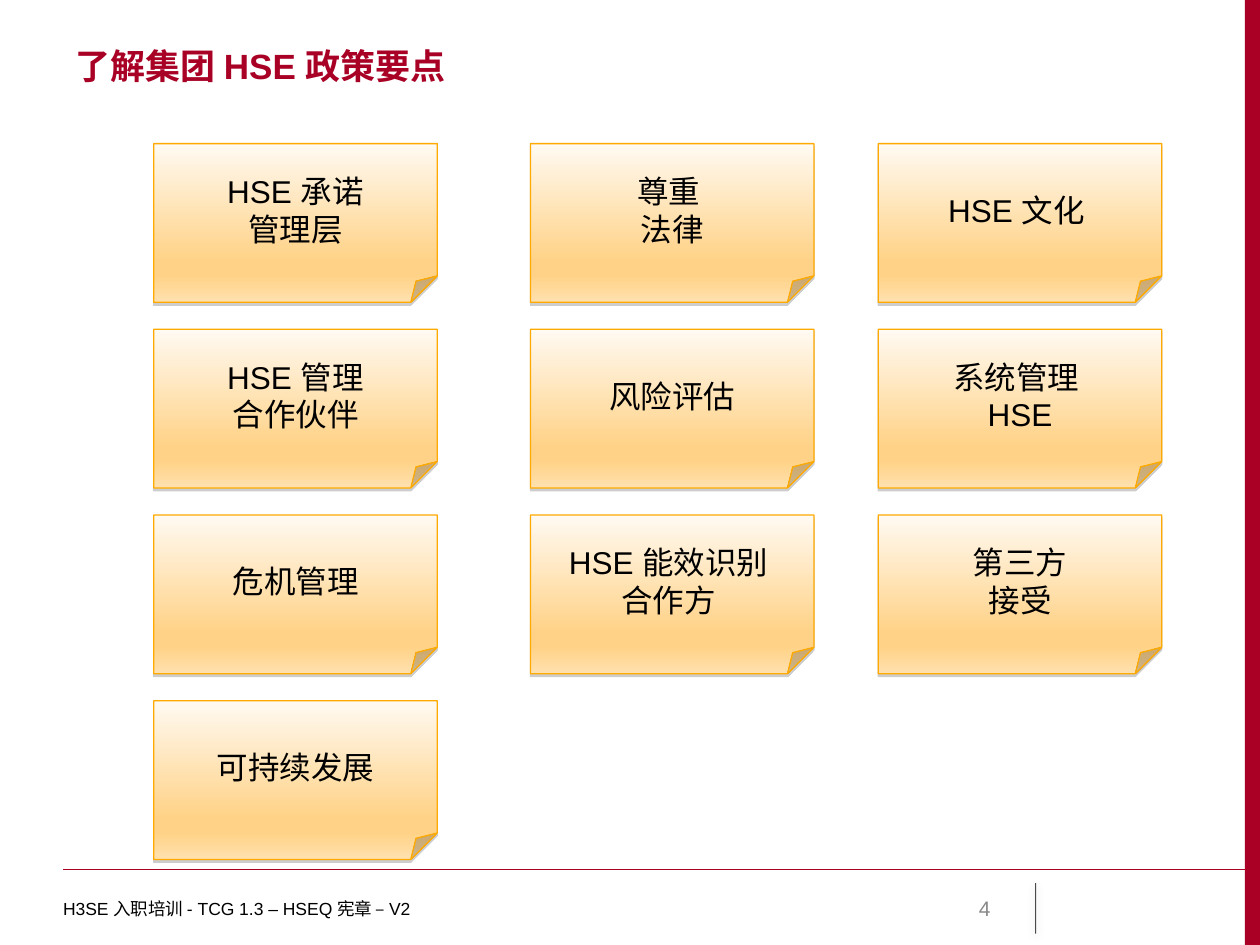
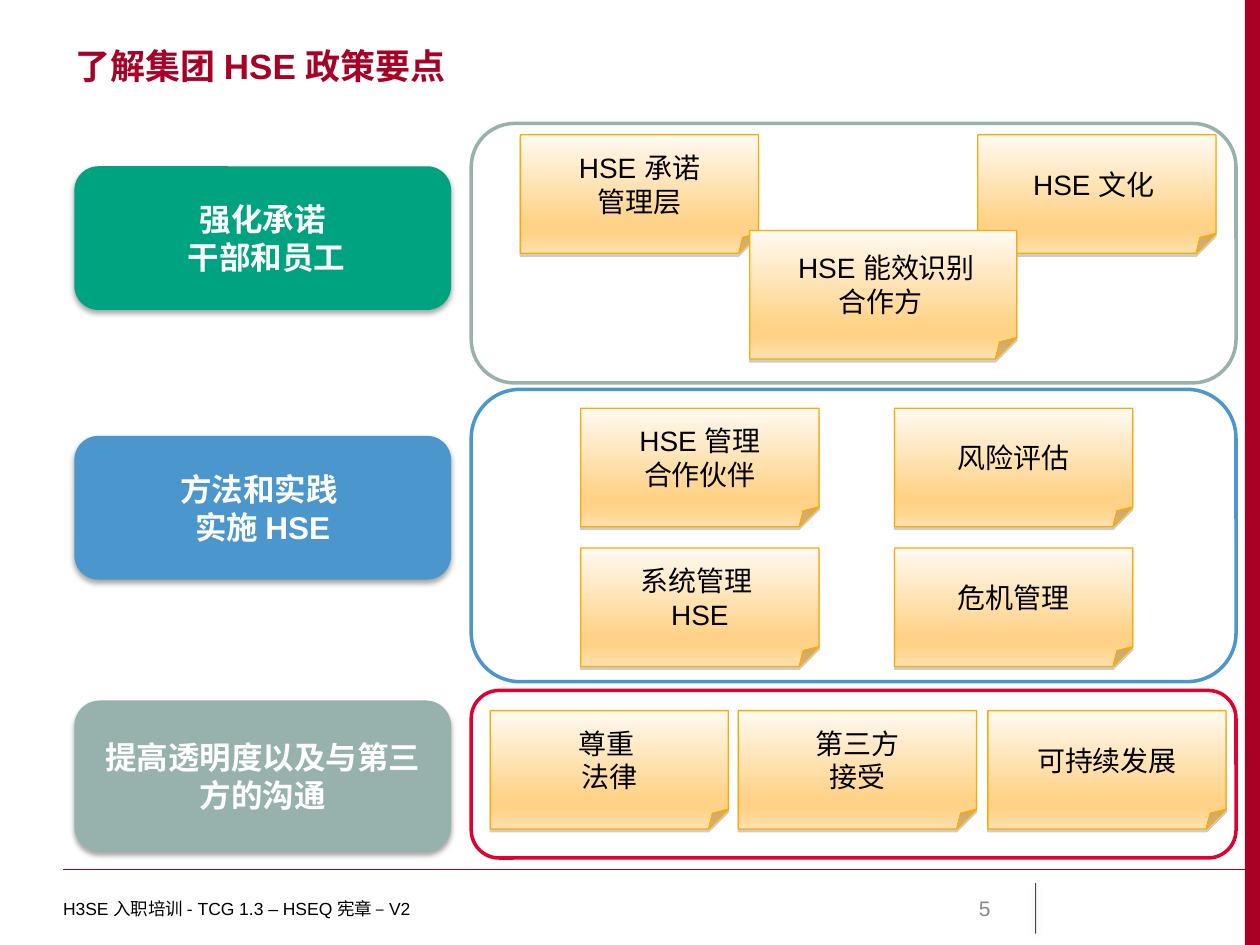
from lxml import etree
from pptx import Presentation
from pptx import util as u
from pptx.dml.color import RGBColor
from pptx.enum import shapes, text
from pptx.oxml import ns

In = u.Inches
rgb = RGBColor.from_string
kind = shapes.MSO_SHAPE
side = text.PP_ALIGN
mid = text.MSO_ANCHOR.MIDDLE

RED, BLACK, WHITE, GREY = "AA0025", "000000", "FFFFFF", "898989"
GREEN, BLUE, SAGE, CRIMSON = "00A37F", "4A96CD", "97B2AD", "E20031"
AMBER = "FFAA00"
STOPS = [(0, "FFFAF2"), (74, "FFD287"), (83, "FFD287"), (100, "FFE1AF")]

HEAD = "了解集团 HSE 政策要点"
FOOT = "H3SE 入职培训 - TCG 1.3 – HSEQ 宪章 – V2"
POINTS = ["HSE 承诺\n管理层", "尊重 \v法律", "HSE 文化 ",
          "HSE 管理\n 合作伙伴 ", "风险评估", "系统管理 \nHSE",
          "危机管理", "HSE 能效识别 \n合作方 ", "第三方\v接受",
          "可持续发展"]


def shade(shape, color=None, alpha=0, blur=0, dist=0):
    """Replace the theme shadow with a downward one, or with none."""
    part = etree.SubElement(shape.element.spPr, ns.qn("a:effectLst"))
    if color:
        drop = etree.SubElement(
            part, ns.qn("a:outerShdw"), blurRad=str(u.Pt(blur)),
            dist=str(u.Pt(dist)), dir="5400000", rotWithShape="0")
        tone = etree.SubElement(drop, ns.qn("a:srgbClr"), val=color)
        etree.SubElement(tone, ns.qn("a:alpha"), val=str(alpha * 1000))


def write(shape, words, size, color, align, bold=False, **frame):
    """Fill a shape with text and set its font and frame."""
    body = shape.text_frame
    body.text = words
    body.word_wrap = True
    for name, value in frame.items():
        setattr(body, name, value)
    look = {"name": "Arial", "size": u.Pt(size), "bold": bold}
    for para in body.paragraphs:
        para.alignment = align
        for run in para.runs:
            for name, value in look.items():
                setattr(run.font, name, value)
            run.font.color.rgb = rgb(color)


deck = Presentation()
deck.slide_width, deck.slide_height = In(10), In(7.5)
layout = deck.slide_layouts[5]
pages = [deck.slides.add_slide(layout) for _ in range(2)]

# Band and rules, moved to the shared layout
draw = pages[0].shapes
band = draw.add_shape(kind.RECTANGLE, In(9.88), 0, In(0.12), In(7.5))
band.fill.solid()
band.fill.fore_color.rgb = rgb(RED)
band.line.fill.background()
shade(band)

straight = shapes.MSO_CONNECTOR.STRAIGHT
rule = draw.add_connector(straight, In(0.5), In(6.9), In(10), In(6.9))
tick = draw.add_connector(straight, In(8.22), In(7.01), In(8.22), In(7.41))
for line, color, width in [(rule, RED, 0.75), (tick, BLACK, 0.5)]:
    line.line.color.rgb = rgb(color)
    line.line.width = u.Pt(width)
tone = tick.element.spPr.find(".//" + ns.qn("a:srgbClr"))
etree.SubElement(tone, ns.qn("a:alpha"), val="70000")
shade(rule)
shade(tick, BLACK, 38, 5, 1.6)
for item in (band, rule, tick):
    layout.shapes.element.append(item.element)

# Title, page number and footer
for number, page in enumerate(pages, 4):
    title = page.shapes.title
    title.left, title.top = In(0.5), In(0.3)
    title.width, title.height = In(8.99), In(0.69)
    write(title, HEAD, 20, "A90025", side.LEFT, True,
          vertical_anchor=text.MSO_ANCHOR.TOP)
    count = page.shapes.add_textbox(In(7.17), In(7.01), In(0.79), In(0.4))
    write(count, str(number), 12, GREY, side.RIGHT, vertical_anchor=mid)
    foot = page.shapes.add_textbox(In(0.5), In(7.01), In(6.08), In(0.4))
    write(foot, FOOT, 10, BLACK, side.LEFT, vertical_anchor=mid,
          margin_left=0)

# Group frames on the second slide
draw = pages[1].shapes
for top, high, color in [(5.48, 1.33, CRIMSON), (3.09, 2.32, BLUE),
                         (0.98, 2.06, SAGE)]:
    frame = draw.add_shape(kind.ROUNDED_RECTANGLE, In(3.74), In(top),
                           In(6.07), In(high))
    frame.fill.solid()
    frame.fill.fore_color.rgb = rgb(WHITE)
    frame.line.color.rgb = rgb(color)
    frame.line.width = u.Pt(2)
    shade(frame)

# Notes: a grid of three columns, then the same points in groups
cols = [1.22, 4.21, 6.97]
grid = [(cols[i % 3], 1.14 + i // 3 * 1.474, 2.25, 1.26)
        for i in range(len(POINTS))]
small = (1.89, 0.94)
groups = [(4.13, 1.07, *small), (3.89, 5.64, *small), (7.76, 1.07, *small),
          (4.61, 3.24, *small), (7.1, 3.24, *small), (4.61, 4.35, *small),
          (7.1, 4.35, *small), (5.95, 1.83, 2.12, 1.02),
          (5.86, 5.64, *small), (7.84, 5.64, *small)]
for page, places, size in [(pages[0], grid, 18), (pages[1], groups, 16)]:
    for words, place in zip(POINTS, places):
        note = page.shapes.add_shape(kind.FOLDED_CORNER, *map(In, place))
        note.fill.gradient()
        note.fill.gradient_angle = 270
        stops = note.element.spPr.find(".//" + ns.qn("a:gsLst"))
        for old in list(stops):
            stops.remove(old)
        for spot, color in STOPS:
            stop = etree.SubElement(stops, ns.qn("a:gs"),
                                    pos=str(spot * 1000))
            etree.SubElement(stop, ns.qn("a:srgbClr"), val=color)
        note.line.color.rgb = rgb(AMBER)
        note.line.width = u.Pt(0.75)
        shade(note, "808080", 38, 0, 1.6)
        write(note, words, size, BLACK, side.CENTER, vertical_anchor=mid,
              margin_left=0, margin_right=0,
              margin_top=In(0.04), margin_bottom=In(0.04))
        if place[0] == 5.95:
            first = note.text_frame.paragraphs[0]
            first._p.get_or_add_pPr().set("marL", str(In(0.1)))

# Goals on the second slide
for top, high, color, words in [
        (1.32, 1.14, GREEN, "强化承诺\n 干部和员工"),
        (3.46, 1.14, BLUE, "方法和实践 \n实施 HSE"),
        (5.56, 1.2, SAGE, "提高透明度以及与第三方的沟通")]:
    goal = draw.add_shape(kind.ROUNDED_RECTANGLE, In(0.59), In(top),
                          In(2.99), In(high))
    goal.fill.solid()
    goal.fill.fore_color.rgb = rgb(color)
    goal.line.fill.background()
    shade(goal, BLACK, 35, 3.1, 1.8)
    write(goal, words, 18, WHITE, side.CENTER, True, vertical_anchor=mid)

deck.save("out.pptx")
